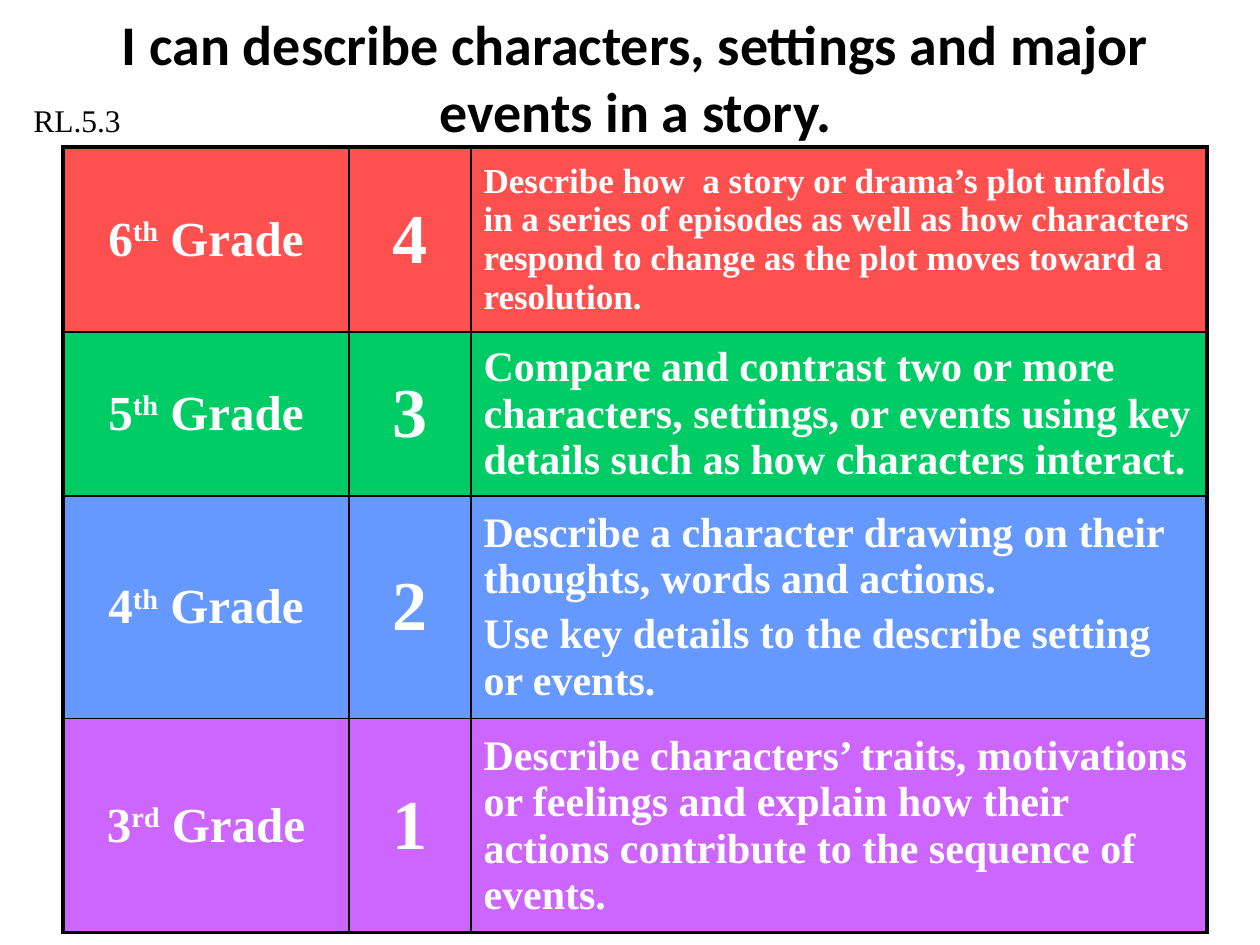
from lxml import etree
from pptx import Presentation
from pptx.dml.color import RGBColor
from pptx.enum.text import MSO_ANCHOR, PP_ALIGN
from pptx.oxml.ns import qn
from pptx.util import Pt

EMU_PER_PX = 914400 // 126
SLIDE_SIZE = (1260, 945)
CENTER, LEFT = PP_ALIGN.CENTER, PP_ALIGN.LEFT
MIDDLE, TOP = MSO_ANCHOR.MIDDLE, MSO_ANCHOR.TOP

BLACK = RGBColor(0x00, 0x00, 0x00)
WHITE = RGBColor(0xFF, 0xFF, 0xFF)
RED = RGBColor(0xFF, 0x50, 0x50)
GREEN = RGBColor(0x00, 0xCC, 0x66)
BLUE = RGBColor(0x66, 0x99, 0xFF)
PURPLE = RGBColor(0xCC, 0x66, 0xFF)

HEADING_FONT, BODY_FONT = "Calibri", "Times New Roman"
OUTER_LINE, INNER_LINE = Pt(2.25), Pt(1)
COLUMN_WIDTHS = (286, 122, 736)

TITLE = "I can describe characters, settings and major events in a story."
STANDARD = "RL.5.3"
LEVELS = [
    (("6", "th"), "4", RED, 185, 20,
     ["Describe how  a story or drama’s plot unfolds in a series of episodes as well as "
      "how characters respond to change as the plot moves toward a resolution."]),
    (("5", "th"), "3", GREEN, 160, 24,
     ["Compare and contrast two or more characters, settings, or events using key "
      "details such as how characters interact."]),
    (("4", "th"), "2", BLUE, 207, 24,
     ["Describe a character drawing on their thoughts, words and actions.",
      "Use key details to the describe setting or events."]),
    (("3", "rd"), "1", PURPLE, 198, 24,
     ["Describe characters’ traits, motivations or feelings and explain how their "
      "actions contribute to the sequence of events."]),
]


def px(length):
    """Turn a length in px into EMU."""
    return length * EMU_PER_PX


def format_run(run, font, size, color, bold):
    """Set the font of one run."""
    run.font.name = font
    run.font.size = Pt(size)
    run.font.color.rgb = color
    run.font.bold = bold


def add_label(slide, box, text, font, size, bold, align, anchor):
    """Place one line of black text in the given box."""
    text_frame = slide.shapes.add_textbox(*map(px, box)).text_frame
    text_frame.word_wrap = True
    text_frame.vertical_anchor = anchor
    text_frame.text = text
    paragraph = text_frame.paragraphs[0]
    paragraph.alignment = align
    format_run(paragraph.runs[0], font, size, BLACK, bold)


def fill_cell(cell, paragraphs, size, align):
    """Write paragraphs of bold white text into a cell."""
    cell.vertical_anchor = MIDDLE
    cell.text_frame.text = "\n".join(paragraphs)
    for index, paragraph in enumerate(cell.text_frame.paragraphs):
        paragraph.alignment = align
        paragraph.space_before = Pt(size * 0.2 if index else 0)
        for run in paragraph.runs:
            format_run(run, BODY_FONT, size, WHITE, True)


def fill_grade(cell, number, suffix):
    """Write a grade with its raised ordinal suffix."""
    fill_cell(cell, [number], 28, CENTER)
    paragraph = cell.text_frame.paragraphs[0]
    for text in (suffix, " Grade"):
        run = paragraph.add_run()
        run.text = text
        format_run(run, BODY_FONT, 28, WHITE, True)
    paragraph.runs[1]._r.get_or_add_rPr().set("baseline", "30000")


def set_borders(cell, widths):
    """Draw black left, right, top and bottom borders of the given widths."""
    properties = cell._tc.get_or_add_tcPr()
    for index, (side, width) in enumerate(zip("LRTB", widths)):
        line = etree.Element(qn(f"a:ln{side}"), w=str(width))
        fill = etree.SubElement(line, qn("a:solidFill"))
        etree.SubElement(fill, qn("a:srgbClr"), val=str(BLACK))
        properties.insert(index, line)


def add_scale_table(slide, box):
    """Place the table of grade levels in the given box."""
    row_count, column_count = len(LEVELS), len(COLUMN_WIDTHS)
    table = slide.shapes.add_table(row_count, column_count, *map(px, box)).table
    table.first_row = table.horz_banding = False
    for column, width in zip(table.columns, COLUMN_WIDTHS):
        column.width = px(width)
    for row_index, (grade, score, color, height, size, goals) in enumerate(LEVELS):
        row = table.rows[row_index]
        row.height = px(height)
        fill_grade(row.cells[0], *grade)
        fill_cell(row.cells[1], [score], 40, CENTER)
        fill_cell(row.cells[2], goals, size, LEFT)
        for column_index, cell in enumerate(row.cells):
            cell.fill.solid()
            cell.fill.fore_color.rgb = color
            edges = (column_index == 0, column_index == column_count - 1,
                     row_index == 0, row_index == row_count - 1)
            set_borders(cell, [OUTER_LINE if edge else INNER_LINE for edge in edges])


def main():
    """Build the slide and save it."""
    presentation = Presentation()
    presentation.slide_width, presentation.slide_height = map(px, SLIDE_SIZE)
    slide = presentation.slides.add_slide(presentation.slide_layouts[6])
    add_label(slide, (95, 14, 1081, 126), TITLE, HEADING_FONT, 32, True, CENTER, MIDDLE)
    add_scale_table(slide, (63, 147, sum(COLUMN_WIDTHS), sum(level[3] for level in LEVELS)))
    add_label(slide, (21, 95, 179, 50), STANDARD, BODY_FONT, 18, False, LEFT, TOP)
    presentation.save("out.pptx")


if __name__ == "__main__":
    main()
